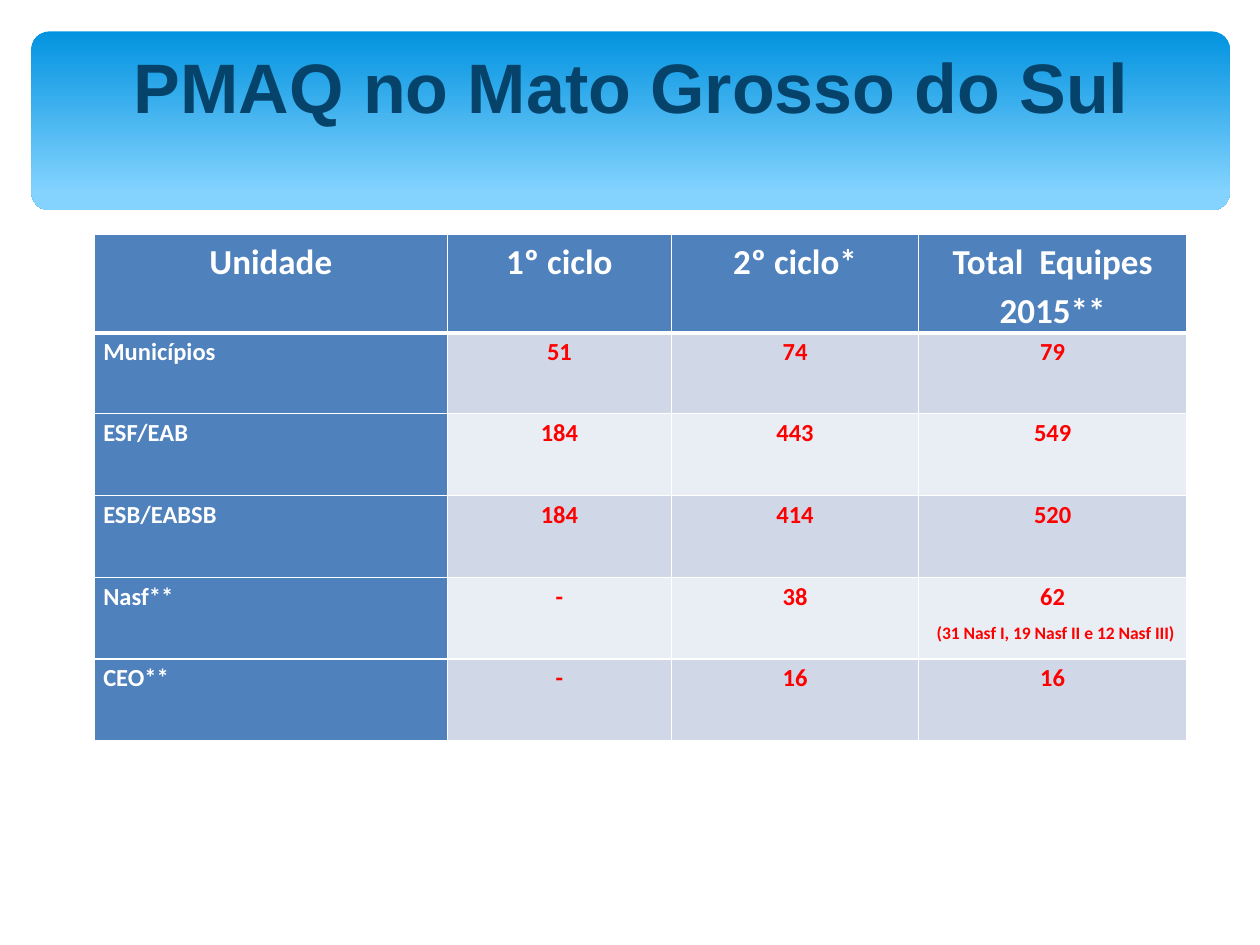
from dataclasses import dataclass

from lxml.etree import SubElement
from pptx import Presentation
from pptx.dml.color import RGBColor
from pptx.enum.shapes import MSO_SHAPE as Shape
from pptx.enum.text import MSO_ANCHOR as Anchor, MSO_AUTO_SIZE as AutoSize, PP_ALIGN as Align
from pptx.oxml.ns import qn
from pptx.util import Inches, Pt

WIDTH, HEIGHT = 10, 7.5
COLORS = {
    "sky": "0293E0", "pale_sky": "83D3FE", "navy": "06436B",
    "head": "4F81BD", "odd": "D0D8E8", "even": "E9EDF4",
    "white": "FFFFFF", "figure": "FF0000",
}


@dataclass(frozen=True)
class Area:
    """Position and size as percentages of the slide."""
    x: float
    y: float
    w: float
    h: float

    def box(self) -> tuple:
        return (Inches(self.x * WIDTH / 100), Inches(self.y * HEIGHT / 100),
                Inches(self.w * WIDTH / 100), Inches(self.h * HEIGHT / 100))


@dataclass(frozen=True)
class CellStyle:
    fill: str
    ink: str
    size: int
    align: Align


@dataclass(frozen=True)
class Unit:
    name: str
    first_cycle: str
    second_cycle: str
    total: str
    detail: str = ""


BANNER = Area(2.5, 3.33, 95.1, 18.93)
HEADING = Area(4.9, 4.27, 90.4, 9.6)
GRID = Area(7.5, 24.8, 86.7, 53.6)
COLUMN_SHARES = (28, 17.8, 19.6, 21.3)
ROW_SHARES = (10.4, 8.53) + (8.67,) * 4

HEADERS = ("Unidade", "1º ciclo", "2º ciclo*", "Total  Equipes 2015**")
UNITS = (
    Unit("Municípios", "51", "74", "79"),
    Unit("ESF/EAB", "184", "443", "549"),
    Unit("ESB/EABSB", "184", "414", "520"),
    Unit("Nasf**", "-", "38", "62", "(31 Nasf I, 19 Nasf II e 12 Nasf III)"),
    Unit("CEO**", "-", "16", "16"),
)
HEADER_STYLE = CellStyle("head", "white", 20, Align.CENTER)
NAME_STYLE = CellStyle("head", "white", 14, Align.LEFT)
FIGURE_STYLES = tuple(CellStyle(band, "figure", 14, Align.CENTER) for band in ("odd", "even"))


def color(name: str) -> RGBColor:
    return RGBColor.from_string(COLORS[name])


def add_run(paragraph, text: str, size: int, ink: str, font: str = "Calibri") -> None:
    run = paragraph.add_run()
    run.text = text
    run.font.name, run.font.size, run.font.bold = font, Pt(size), True
    run.font.color.rgb = color(ink)


def add_line(cell, runs: list, style: CellStyle, is_first: bool) -> None:
    frame = cell.text_frame
    paragraph = frame.paragraphs[0] if is_first else frame.add_paragraph()
    paragraph.alignment, paragraph.line_spacing = style.align, 1.15
    for text, size in runs:
        add_run(paragraph, text, size, style.ink)


def set_borders(cell, top: int, bottom: int) -> None:
    properties = cell._tc.get_or_add_tcPr()
    for side, points in (("L", 1), ("R", 1), ("T", top), ("B", bottom)):
        border = SubElement(properties, qn(f"a:ln{side}"), w=str(Pt(points)))
        SubElement(SubElement(border, qn("a:solidFill")), qn("a:srgbClr"), val=COLORS["white"])


def fill_cell(cell, text: str, style: CellStyle, row: int, detail: str = "") -> None:
    set_borders(cell, top=3 if row == 1 else 1, bottom=3 if row == 0 else 1)
    cell.fill.solid()
    cell.fill.fore_color.rgb = color(style.fill)
    cell.margin_left = cell.margin_right = Inches(0.07)
    cell.margin_top = cell.margin_bottom = 0
    add_line(cell, [(text, style.size)], style, True)
    if detail:
        add_line(cell, [(" ", style.size), (detail, 10)], style, False)


def add_heading(slide) -> None:
    title = slide.shapes.title
    title.left, title.top, title.width, title.height = HEADING.box()
    frame = title.text_frame
    frame.auto_size, frame.word_wrap = AutoSize.NONE, True
    frame.vertical_anchor = Anchor.MIDDLE
    frame.margin_left = frame.margin_top = frame.margin_bottom = 0
    frame.margin_right = Inches(0.04)
    paragraph = frame.paragraphs[0]
    paragraph.alignment = Align.CENTER
    paragraph._p.get_or_add_pPr().set("marL", str(Inches(0.04)))
    add_run(paragraph, "PMAQ no Mato Grosso do Sul", 40, "navy", "Arial")


def add_banner(slide) -> None:
    banner = slide.shapes.add_shape(Shape.ROUNDED_RECTANGLE, *BANNER.box())
    banner.adjustments[0] = 0.1
    banner.shadow.inherit = False
    banner.line.fill.background()
    banner.fill.gradient()
    banner.fill.gradient_angle = 270
    for stop, (name, position) in zip(banner.fill.gradient_stops, (("sky", 0), ("pale_sky", 0.9))):
        stop.color.rgb, stop.position = color(name), position
    # The banner lies behind the title
    slide.shapes.title.element.addprevious(banner.element)


def add_units_table(slide) -> None:
    table = slide.shapes.add_table(len(ROW_SHARES), len(COLUMN_SHARES), *GRID.box()).table
    for column, share in zip(table.columns, COLUMN_SHARES):
        column.width = Inches(share * WIDTH / 100)
    for row, share in zip(table.rows, ROW_SHARES):
        row.height = Inches(share * HEIGHT / 100)
    for col, text in enumerate(HEADERS):
        fill_cell(table.cell(0, col), text, HEADER_STYLE, 0)
    for row, unit in enumerate(UNITS, start=1):
        figures = FIGURE_STYLES[(row - 1) % 2]
        fill_cell(table.cell(row, 0), unit.name, NAME_STYLE, row)
        fill_cell(table.cell(row, 1), unit.first_cycle, figures, row)
        fill_cell(table.cell(row, 2), unit.second_cycle, figures, row)
        fill_cell(table.cell(row, 3), unit.total, figures, row, unit.detail)


def main() -> None:
    deck = Presentation()
    deck.slide_width, deck.slide_height = Inches(WIDTH), Inches(HEIGHT)
    slide = deck.slides.add_slide(deck.slide_layouts.get_by_name("Title Only"))
    add_heading(slide)
    add_banner(slide)
    add_units_table(slide)
    deck.save("out.pptx")


if __name__ == "__main__":
    main()
